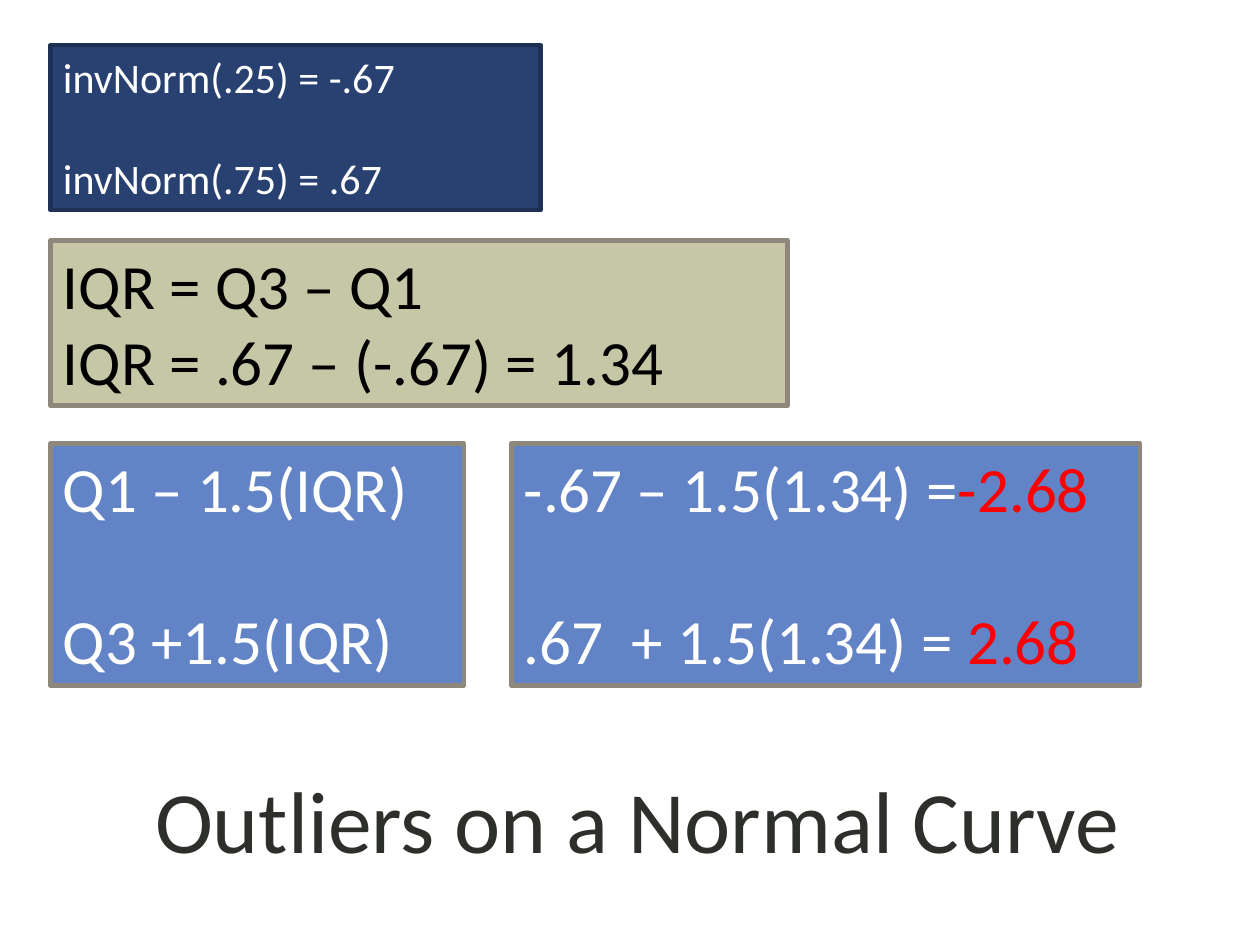
from dataclasses import dataclass

from pptx import Presentation
from pptx.dml.color import RGBColor
from pptx.enum.shapes import MSO_SHAPE
from pptx.enum.text import MSO_ANCHOR, MSO_AUTO_SIZE, PP_ALIGN
from pptx.util import Cm, Pt

COLORS = {
    "title": "2D2F2B",
    "navy": "294171",
    "navy_line": "1E3054",
    "sand": "C6C7A6",
    "blue": "6284C6",
    "gray_line": "8E887C",
    "white": "FFFFFF",
    "black": "000000",
    "red": "FF0000",
}
FONT = "Calibri"
LEFT = 1.02
FENCE_TOP, FENCE_HEIGHT = 8.94, 4.88


@dataclass(frozen=True)
class Line:
    text: str
    result: str = ""  # highlighted in red after the text


@dataclass(frozen=True)
class Box:
    left: float
    top: float
    width: float
    height: float
    fill: str
    lines: tuple[Line, ...]
    border: str = "gray_line"
    color: str = "white"
    size: float = 36
    gap: float = 0  # points between paragraphs


BOXES = (
    Box(LEFT, 0.91, 9.88, 3.33, "navy",
        (Line("invNorm(.25) = -.67"), Line("invNorm(.75) = .67")),
        border="navy_line", size=24, gap=29),
    Box(LEFT, FENCE_TOP, 8.33, FENCE_HEIGHT, "blue",
        (Line("Q1 – 1.5(IQR)"), Line("Q3 +1.5(IQR)")), gap=43.5),
    Box(LEFT, 4.85, 14.86, 3.33, "sand",
        (Line("IQR = Q3 – Q1"), Line("IQR = .67 – (-.67) = 1.34")),
        color="black"),
    Box(10.31, FENCE_TOP, 12.67, FENCE_HEIGHT, "blue",
        (Line("-.67 – 1.5(1.34) =", "-2.68"),
         Line(".67  + 1.5(1.34) = ", "2.68")), gap=43.5),
)


def rgb(name: str) -> RGBColor:
    return RGBColor.from_string(COLORS[name])


def set_font(font, size: float, color: str) -> None:
    font.name = FONT
    font.size = Pt(size)
    font.color.rgb = rgb(color)


def add_title(s, text: str) -> None:
    sp = s.shapes.title
    sp.left, sp.top, sp.width, sp.height = Cm(1.68), Cm(15.24), Cm(22.35), Cm(2.54)
    tf = sp.text_frame
    tf.text = text
    tf.vertical_anchor = MSO_ANCHOR.MIDDLE
    p = tf.paragraphs[0]
    p.alignment = PP_ALIGN.CENTER
    set_font(p.font, 50, "title")


def add_box(s, box: Box) -> None:
    sp = s.shapes.add_shape(MSO_SHAPE.RECTANGLE, Cm(box.left), Cm(box.top),
                            Cm(box.width), Cm(box.height))
    sp.shadow.inherit = False
    sp.fill.solid()
    sp.fill.fore_color.rgb = rgb(box.fill)
    sp.line.color.rgb = rgb(box.border)
    sp.line.width = Pt(2.5)

    tf = sp.text_frame
    tf.word_wrap = True
    tf.auto_size = MSO_AUTO_SIZE.SHAPE_TO_FIT_TEXT
    tf.vertical_anchor = MSO_ANCHOR.TOP
    for i, line in enumerate(box.lines):
        p = tf.add_paragraph() if i else tf.paragraphs[0]
        p.alignment = PP_ALIGN.LEFT
        p.space_before = Pt(box.gap if i else 0)
        set_font(p.font, box.size, box.color)
        p.add_run().text = line.text
        if line.result:
            r = p.add_run()
            r.text = line.result
            r.font.color.rgb = rgb("red")


def main() -> None:
    prs = Presentation()
    prs.slide_width, prs.slide_height = Cm(25.4), Cm(19.05)
    s = prs.slides.add_slide(prs.slide_layouts[5])
    add_title(s, "Outliers on a Normal Curve")
    for box in BOXES:
        add_box(s, box)
    prs.save("out.pptx")


if __name__ == "__main__":
    main()
